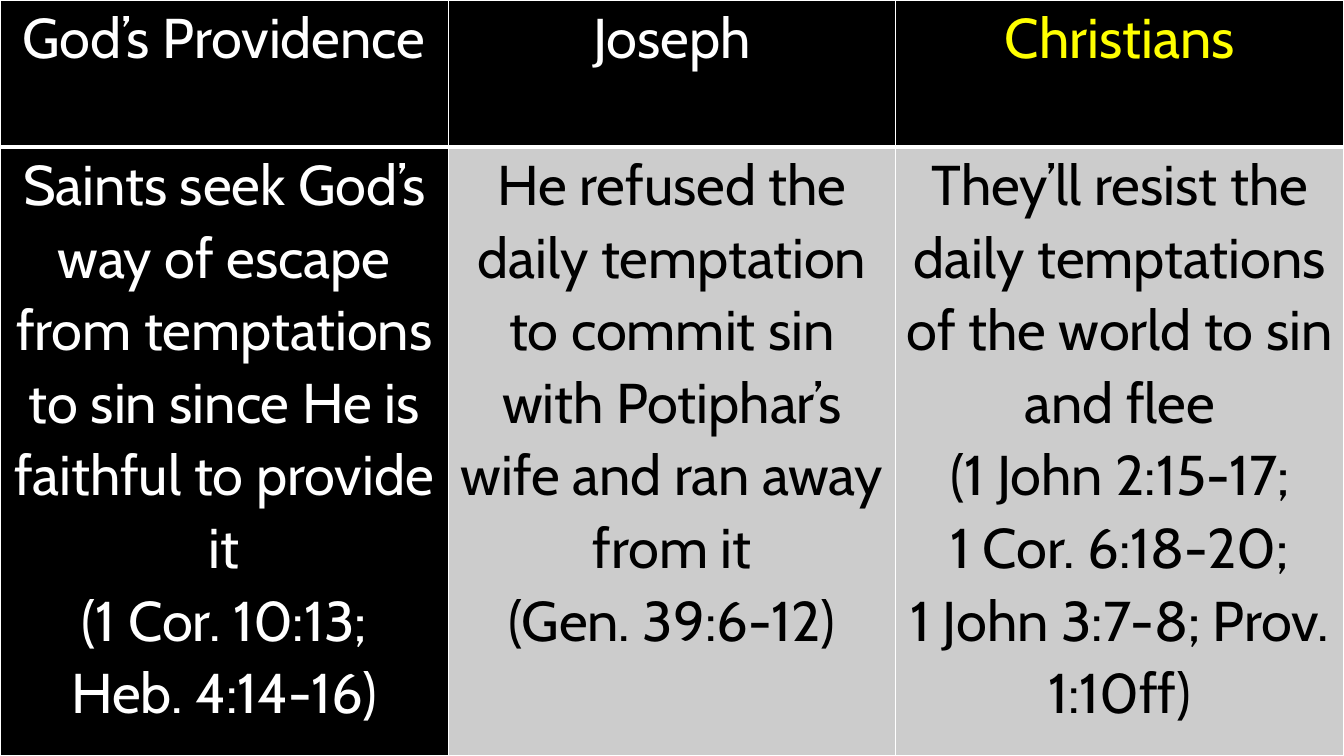
from dataclasses import dataclass

from lxml import etree
from pptx import Presentation
from pptx.dml.color import RGBColor
from pptx.enum.text import PP_ALIGN
from pptx.oxml.ns import qn
from pptx.util import Emu, Pt

PX = 9525
SLIDE_WIDTH, SLIDE_HEIGHT = 1280, 720
HEADER_HEIGHT = 140
CELL_INSET = 7
CENTER = PP_ALIGN.CENTER
BLANK_LAYOUT = 6


@dataclass(frozen=True)
class Theme:
    font: str = "Cabin"
    size: int = 40
    line_spacing: float = 1.07
    black: str = "000000"
    white: str = "FFFFFF"
    yellow: str = "FFFF00"
    gray: str = "CCCCCC"
    thin: int = 1
    thick: int = 3


THEME = Theme()

# Each column: heading, heading colour, body fill, body colour, body paragraphs
COLUMNS = [
    ("God’s Providence", THEME.white, THEME.black, THEME.white, [
        "Saints seek God’s way of escape from temptations to sin "
        "since He is faithful to provide it",
        "(1 Cor. 10:13;",
        "Heb. 4:14-16)",
    ]),
    ("Joseph", THEME.white, THEME.gray, THEME.black, [
        "He refused the daily temptation to commit sin with "
        "Potiphar’s wife and ran away from it",
        "(Gen. 39:6-12)",
    ]),
    ("Christians", THEME.yellow, THEME.gray, THEME.black, [
        "They’ll resist the daily temptations of the world to sin and flee",
        "(1 John 2:15-17;",
        "1 Cor. 6:18-20;",
        "1 John 3:7-8; Prov. 1:10ff)",
    ]),
]


def px(length):
    return Emu(length * PX)


def set_borders(cell, top, bottom):
    """Draw white cell borders; top and bottom are widths in points."""
    properties = cell._tc.get_or_add_tcPr()
    widths = {"lnL": THEME.thin, "lnR": THEME.thin, "lnT": top, "lnB": bottom}
    for tag, width in widths.items():
        line = etree.SubElement(properties, qn(f"a:{tag}"), w=str(Pt(width)))
        fill = etree.SubElement(line, qn("a:solidFill"))
        etree.SubElement(fill, qn("a:srgbClr"), val=THEME.white)


def fill_cell(cell, paragraphs, fill, color, top, bottom):
    set_borders(cell, top, bottom)
    cell.fill.solid()
    cell.fill.fore_color.rgb = RGBColor.from_string(fill)
    cell.margin_left = cell.margin_right = px(CELL_INSET)
    cell.margin_top = cell.margin_bottom = 0
    frame = cell.text_frame
    for index, text in enumerate(paragraphs):
        para = frame.add_paragraph() if index else frame.paragraphs[0]
        para.alignment = CENTER
        para.line_spacing = THEME.line_spacing
        span = para.add_run()
        span.text = text
        span.font.name = THEME.font
        span.font.size = Pt(THEME.size)
        span.font.bold = False
        span.font.color.rgb = RGBColor.from_string(color)


def add_comparison_table(page, left, top, width, height):
    count = len(COLUMNS)
    table = page.shapes.add_table(
        2, count, px(left), px(top), px(width), px(height)).table
    table.horz_banding = False
    table.rows[0].height = px(HEADER_HEIGHT)
    table.rows[1].height = px(height - HEADER_HEIGHT)
    for index, (heading, heading_color, fill, color, body) in enumerate(COLUMNS):
        start, end = (round(width * step / count) for step in (index, index + 1))
        table.columns[index].width = px(end - start)
        fill_cell(table.cell(0, index), [heading], THEME.black, heading_color,
                  THEME.thin, THEME.thick)
        fill_cell(table.cell(1, index), body, fill, color,
                  THEME.thick, THEME.thin)


def main():
    deck = Presentation()
    deck.slide_width, deck.slide_height = px(SLIDE_WIDTH), px(SLIDE_HEIGHT)
    page = deck.slides.add_slide(deck.slide_layouts[BLANK_LAYOUT])
    page.background.fill.solid()
    page.background.fill.fore_color.rgb = RGBColor.from_string(THEME.black)
    add_comparison_table(page, 0, 0, SLIDE_WIDTH, SLIDE_HEIGHT)
    deck.save("out.pptx")


if __name__ == "__main__":
    main()
